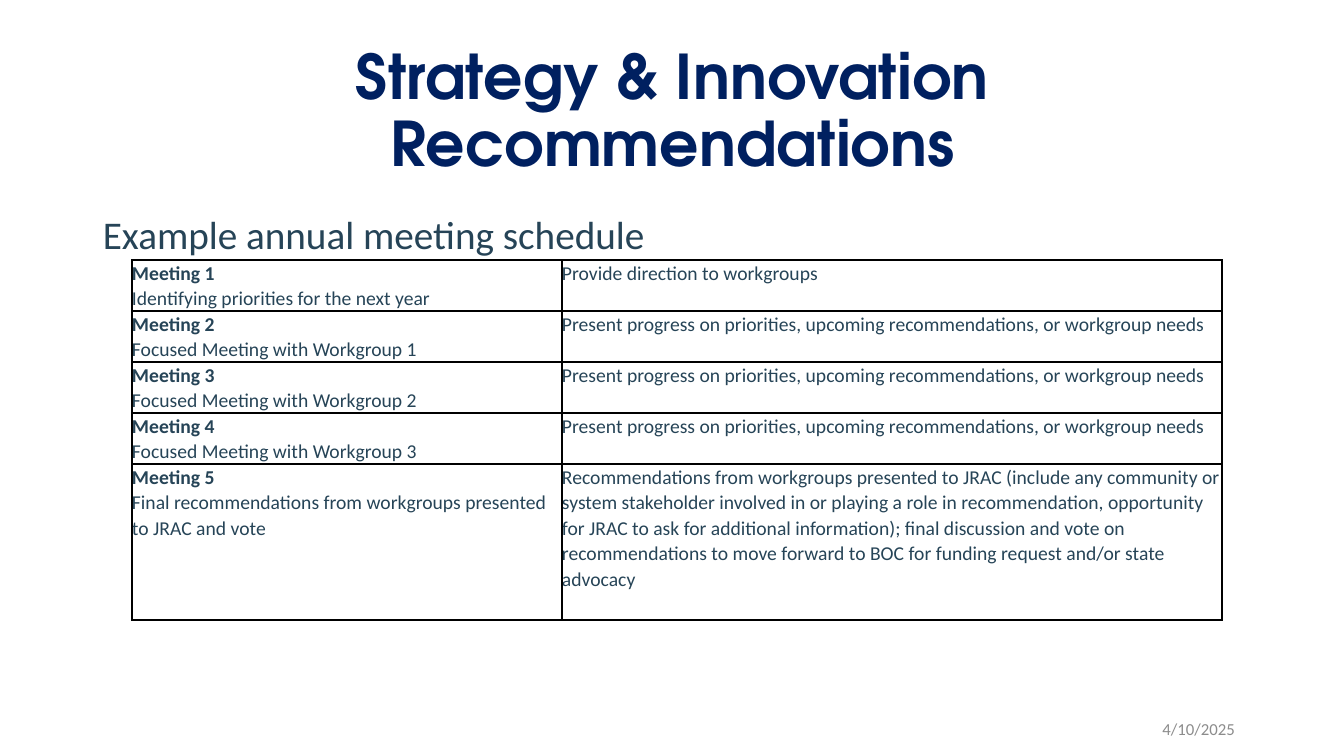
from lxml import etree
from pptx import Presentation
from pptx.dml.color import RGBColor
from pptx.enum.text import MSO_ANCHOR, PP_ALIGN
from pptx.oxml.ns import qn
from pptx.util import Emu, Pt

LEFT, CENTER, RIGHT = PP_ALIGN.LEFT, PP_ALIGN.CENTER, PP_ALIGN.RIGHT
TOP, MIDDLE = MSO_ANCHOR.TOP, MSO_ANCHOR.MIDDLE

PROGRESS = "Present progress on priorities, upcoming recommendations, or workgroup needs"
MEETINGS = [
    ("Identifying priorities for the next year", "Provide direction to workgroups"),
    ("Focused Meeting with Workgroup 1", PROGRESS),
    ("Focused Meeting with Workgroup 2", PROGRESS),
    ("Focused Meeting with Workgroup 3", PROGRESS),
    (
        "Final recommendations from workgroups presented to JRAC and vote",
        "Recommendations from workgroups presented to JRAC (include any community or "
        "system stakeholder involved in or playing a role in recommendation, opportunity "
        "for JRAC to ask for additional information); final discussion and vote on "
        "recommendations to move forward to BOC for funding request and/or state advocacy",
    ),
]

THEME = {
    "title": {"font": "TeX Gyre Adventor", "size": 44, "color": "002060"},
    "heading": {"font": "Calibri", "size": 28, "color": "264457"},
    "table": {"font": "Calibri", "size": 14, "color": "264457"},
    "date": {"font": "Calibri", "size": 12, "color": "8C8C8C"},
    "border": "000000",
    "border_width": 1,
}

TEXTS = [
    ("Strategy & Innovation Recommendations", "title", (93, 40, 1159, 146), CENTER, MIDDLE, 0.9, True),
    ("Example annual meeting schedule", "heading", (93, 202, 1159, 480), LEFT, TOP, 1.07, False),
    ("4/10/2025", "date", (943, 709, 302, 40), RIGHT, MIDDLE, 1.0, False),
]
TABLE_LEFT, TABLE_TOP = 132, 260
COLUMN_WIDTHS = [430, 660]
ROW_HEIGHTS = [51] * (len(MEETINGS) - 1) + [156]
TABLE_SPACING = 1.07


def px(value):
    return Emu(round(value * 914400 / 100.8))


def write(paragraph, text, style, spacing, bold=False, align=LEFT):
    paragraph.alignment = align
    paragraph.line_spacing = spacing
    run = paragraph.add_run()
    run.text = text
    run.font.name = THEME[style]["font"]
    run.font.size = Pt(THEME[style]["size"])
    run.font.color.rgb = RGBColor.from_string(THEME[style]["color"])
    run.font.bold = bold


def add_text(slide, text, style, box, align, anchor, spacing, bold):
    frame = slide.shapes.add_textbox(*map(px, box)).text_frame
    frame.word_wrap = True
    frame.vertical_anchor = anchor
    write(frame.paragraphs[0], text, style, spacing, bold, align)


def format_cell(cell):
    cell.margin_left = cell.margin_right = cell.margin_top = cell.margin_bottom = 0
    properties = cell._tc.get_or_add_tcPr()
    for side in ("a:lnL", "a:lnR", "a:lnT", "a:lnB"):
        line = etree.SubElement(properties, qn(side), w=str(Pt(THEME["border_width"])))
        fill = etree.SubElement(line, qn("a:solidFill"))
        etree.SubElement(fill, qn("a:srgbClr"), val=THEME["border"])
    cell.fill.background()


def add_schedule(slide):
    table = slide.shapes.add_table(
        len(MEETINGS), len(COLUMN_WIDTHS), px(TABLE_LEFT), px(TABLE_TOP),
        px(sum(COLUMN_WIDTHS)), px(sum(ROW_HEIGHTS)),
    ).table
    table.first_row = table.horz_banding = False
    for column, width in zip(table.columns, COLUMN_WIDTHS):
        column.width = px(width)
    for number, (row, height, (focus, task)) in enumerate(zip(table.rows, ROW_HEIGHTS, MEETINGS), 1):
        row.height = px(height)
        meeting_cell, task_cell = row.cells
        format_cell(meeting_cell)
        format_cell(task_cell)
        meeting_frame = meeting_cell.text_frame
        write(meeting_frame.paragraphs[0], f"Meeting {number}", "table", TABLE_SPACING, True)
        write(meeting_frame.add_paragraph(), focus, "table", TABLE_SPACING)
        write(task_cell.text_frame.paragraphs[0], task, "table", TABLE_SPACING)


def main():
    presentation = Presentation()
    presentation.slide_width, presentation.slide_height = px(1344), px(756)
    slide = presentation.slides.add_slide(presentation.slide_layouts[6])
    for entry in TEXTS:
        add_text(slide, *entry)
    add_schedule(slide)
    presentation.save("out.pptx")


if __name__ == "__main__":
    main()
